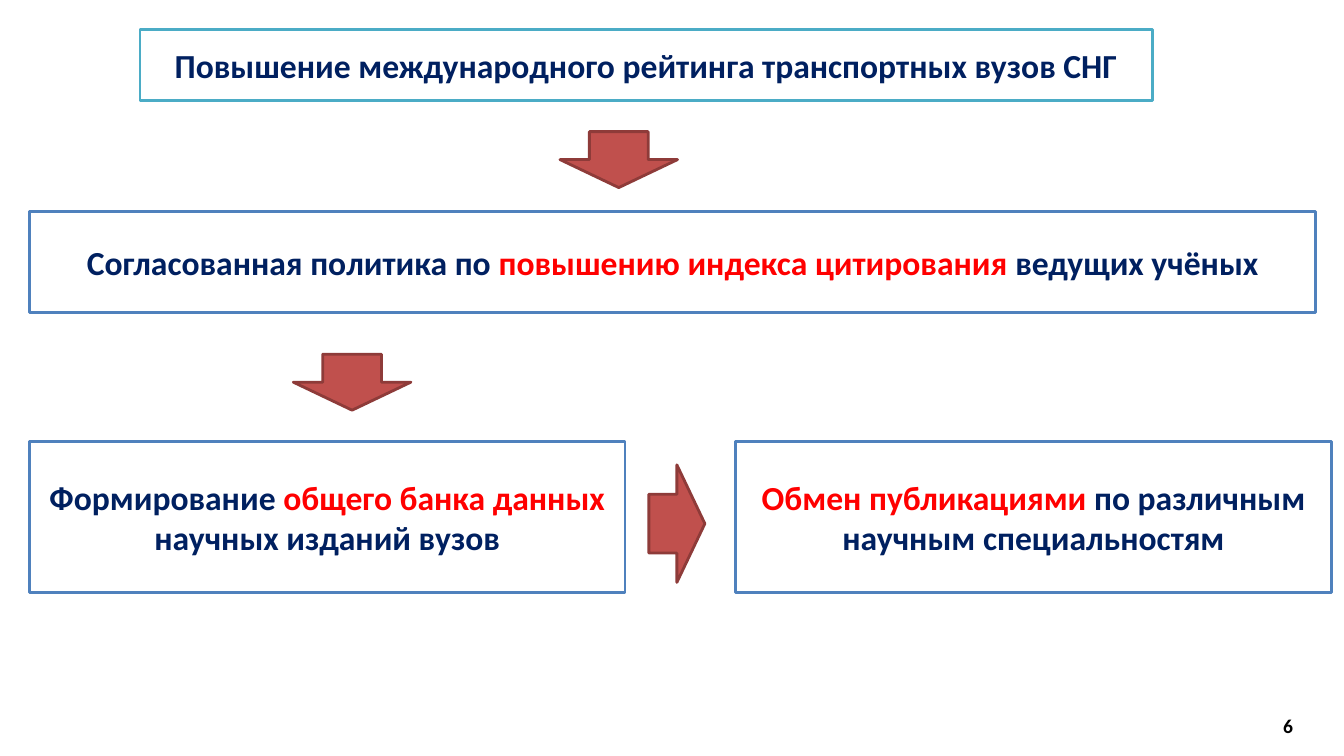
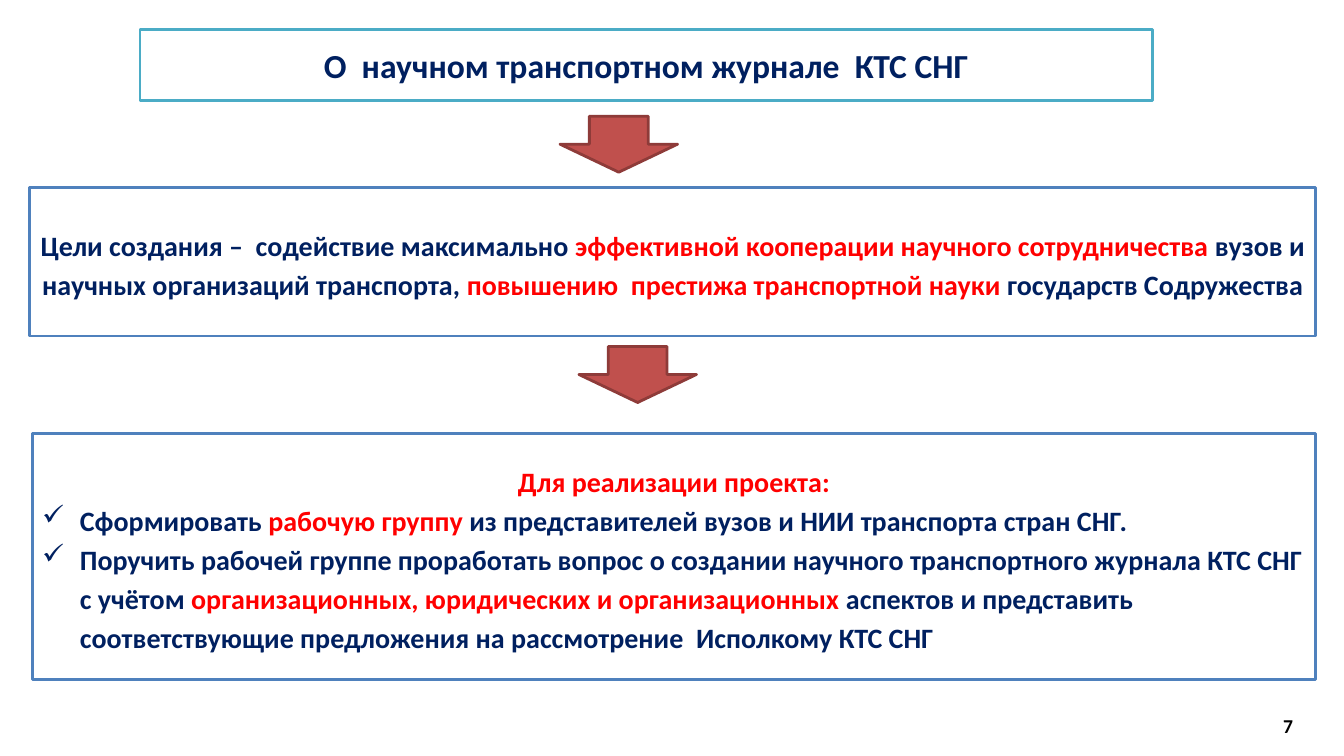
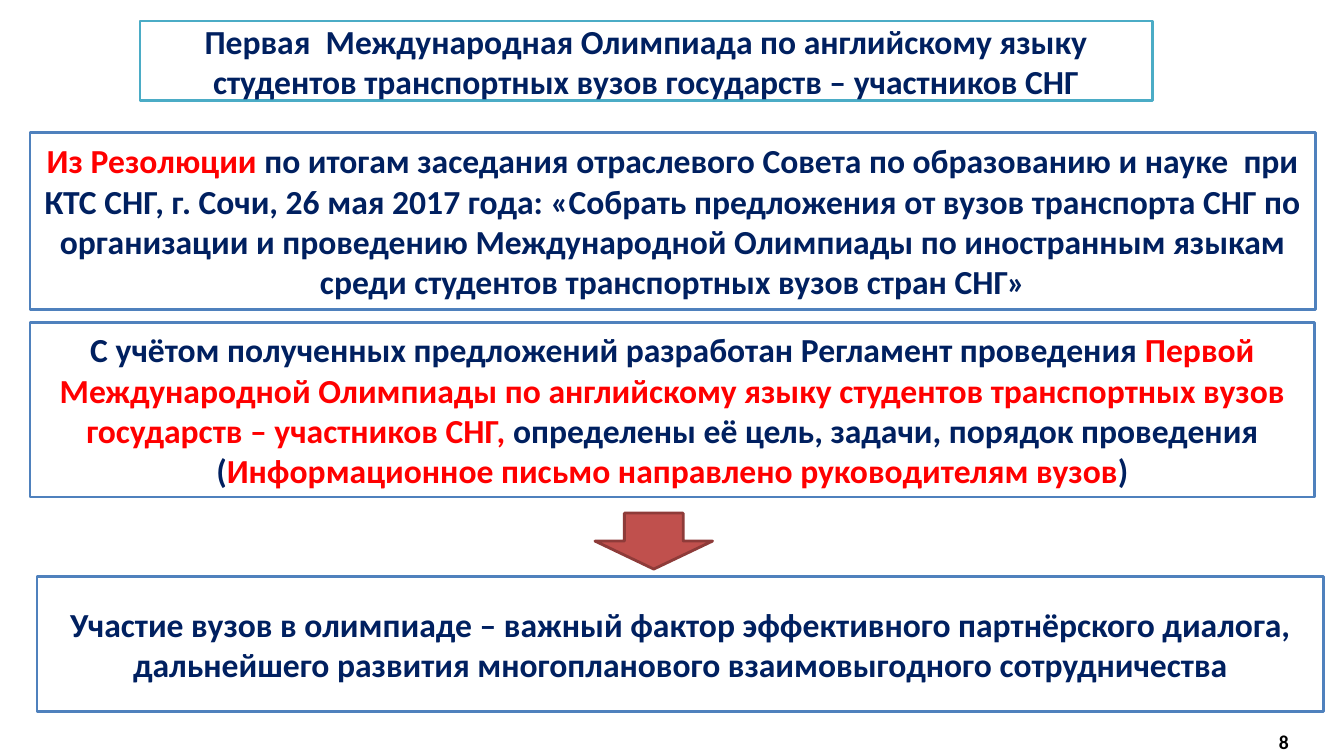
from lxml import etree
from pptx import Presentation
from pptx.dml.color import RGBColor
from pptx.enum.shapes import MSO_SHAPE
from pptx.enum.text import MSO_ANCHOR, PP_ALIGN
from pptx.oxml.ns import qn
from pptx.util import Pt

RECT = MSO_SHAPE.RECTANGLE
DOWN_ARROW = MSO_SHAPE.DOWN_ARROW
MIDDLE = MSO_ANCHOR.MIDDLE
CENTER = PP_ALIGN.CENTER
LEFT = PP_ALIGN.LEFT


def rgb(value):
    return RGBColor.from_string(value)


class Deck:
    FONT = "Calibri"
    NAVY, RED, BLACK, WHITE = "002060", "FF0000", "000000", "FFFFFF"
    TEAL, BLUE = "4BACC6", "4F81BD"
    ARROW_FILL, ARROW_LINE = "C0504D", "8E3B39"
    INDENT = 27

    def __init__(self):
        self.prs = Presentation()
        self.prs.slide_width, self.prs.slide_height = Pt(960), Pt(540)
        self.s = None

    def slide(self):
        self.s = self.prs.slides.add_slide(self.prs.slide_layouts[6])

    def shape(self, kind, x, y, w, h, fill, line):
        sp = self.s.shapes.add_shape(kind, Pt(x), Pt(y), Pt(w), Pt(h))
        sp.shadow.inherit = False
        sp.fill.solid()
        sp.fill.fore_color.rgb = rgb(fill)
        sp.line.color.rgb = rgb(line)
        sp.line.width = Pt(2)
        return sp

    def frame(self, sp, dx, dy):
        tf = sp.text_frame
        tf.word_wrap = True
        tf.vertical_anchor = MIDDLE
        tf.margin_left = tf.margin_right = Pt(dx)
        tf.margin_top = tf.margin_bottom = Pt(dy)
        return tf

    def rich_text(self, p, text, size, color=NAVY, align=CENTER):
        p.alignment = align
        for i, part in enumerate(text.split("*")):
            if part:
                r = p.add_run()
                r.text = part
                r.font.name = self.FONT
                r.font.size = Pt(size)
                r.font.bold = True
                r.font.color.rgb = rgb(self.RED if i % 2 else color)

    def bullet(self, p):
        pPr = p._p.get_or_add_pPr()
        pPr.set("marL", str(Pt(self.INDENT)))
        pPr.set("indent", str(-Pt(self.INDENT)))
        etree.SubElement(pPr, qn("a:buChar")).set("char", "✓")

    def title(self, text, y=21, h=51):
        sp = self.shape(RECT, 100, y, 723, h, self.WHITE, self.TEAL)
        self.rich_text(self.frame(sp, 4.5, 2.25).paragraphs[0], text, 24)

    def box(self, x, y, w, h, text, size=24, spacing=None, bullets=()):
        sp = self.shape(RECT, x, y, w, h, self.WHITE, self.BLUE)
        tf = self.frame(sp, 7.2, 3.6)
        self.rich_text(tf.paragraphs[0], text, size)
        for item in bullets:
            p = tf.add_paragraph()
            self.rich_text(p, item, size, align=LEFT)
            self.bullet(p)
        if spacing:
            for p in tf.paragraphs:
                p.line_spacing = Pt(spacing)

    def arrow(self, x, y, rotation=0):
        sp = self.shape(DOWN_ARROW, x, y, 84, 40, self.ARROW_FILL, self.ARROW_LINE)
        sp.rotation = rotation

    def number(self, text, x=890, y=508):
        sp = self.s.shapes.add_textbox(Pt(x), Pt(y), Pt(60), Pt(20))
        self.rich_text(self.frame(sp, 0, 0).paragraphs[0], text, 14, self.BLACK)


def rating(d):
    d.slide()
    d.title("Повышение международного рейтинга транспортных вузов СНГ")
    d.arrow(400, 94)
    d.box(21, 151, 919, 72,
          "Согласованная политика по *повышению индекса цитирования* ведущих учёных")
    d.arrow(209.5, 253)
    d.box(21, 315.5, 425.5, 108,
          "Формирование *общего банка данных* научных изданий вузов")
    d.arrow(441.5, 354, rotation=270)
    d.box(525.5, 315.5, 425.5, 108,
          "*Обмен публикациями* по различным научным специальностям")
    d.number("6")


def journal(d):
    d.slide()
    d.title("О  научном транспортном журнале  КТС СНГ")
    d.arrow(400, 83)
    d.box(21, 134, 919, 106,
          "Цели создания –  содействие максимально *эффективной кооперации научного "
          "сотрудничества* вузов и научных организаций транспорта, *повышению  престижа "
          "транспортной науки* государств Содружества", size=20, spacing=28)
    d.arrow(413.5, 247.5)
    d.box(23, 309.5, 917, 176, "*Для реализации проекта:*", size=20, spacing=28, bullets=[
        "Сформировать *рабочую группу* из представителей вузов и НИИ транспорта стран СНГ.",
        "Поручить рабочей группе проработать вопрос о создании научного транспортного "
        "журнала КТС СНГ с учётом *организационных, юридических и организационных* аспектов "
        "и представить соответствующие предложения на рассмотрение  Исполкому КТС СНГ",
    ])
    d.number("7")


def olympiad(d):
    d.slide()
    d.title("Первая  Международная Олимпиада по английскому языку студентов "
            "транспортных вузов государств – участников СНГ", y=15, h=57)
    d.box(21.5, 94.5, 918, 126.5,
          "*Из Резолюции* по итогам заседания отраслевого Совета по образованию и науке  при "
          "КТС СНГ, г. Сочи, 26 мая 2017 года: «Собрать предложения от вузов транспорта СНГ "
          "по организации и проведению Международной Олимпиады по иностранным языкам среди "
          "студентов транспортных вузов стран СНГ»")
    d.box(21.5, 230.5, 917.5, 124.5,
          "С учётом полученных предложений разработан Регламент проведения *Первой "
          "Международной Олимпиады по английскому языку студентов транспортных вузов "
          "государств – участников СНГ,* определены её цель, задачи, порядок проведения "
          "(*Информационное письмо направлено руководителям вузов*)")
    d.arrow(425, 366.5)
    d.box(26.5, 412, 919, 96.5,
          "Участие вузов в олимпиаде – важный фактор эффективного партнёрского диалога, "
          "дальнейшего развития многопланового взаимовыгодного сотрудничества")
    d.number("8", x=887, y=520)


def main():
    d = Deck()
    for build in (rating, journal, olympiad):
        build(d)
    d.prs.save("out.pptx")


if __name__ == "__main__":
    main()
